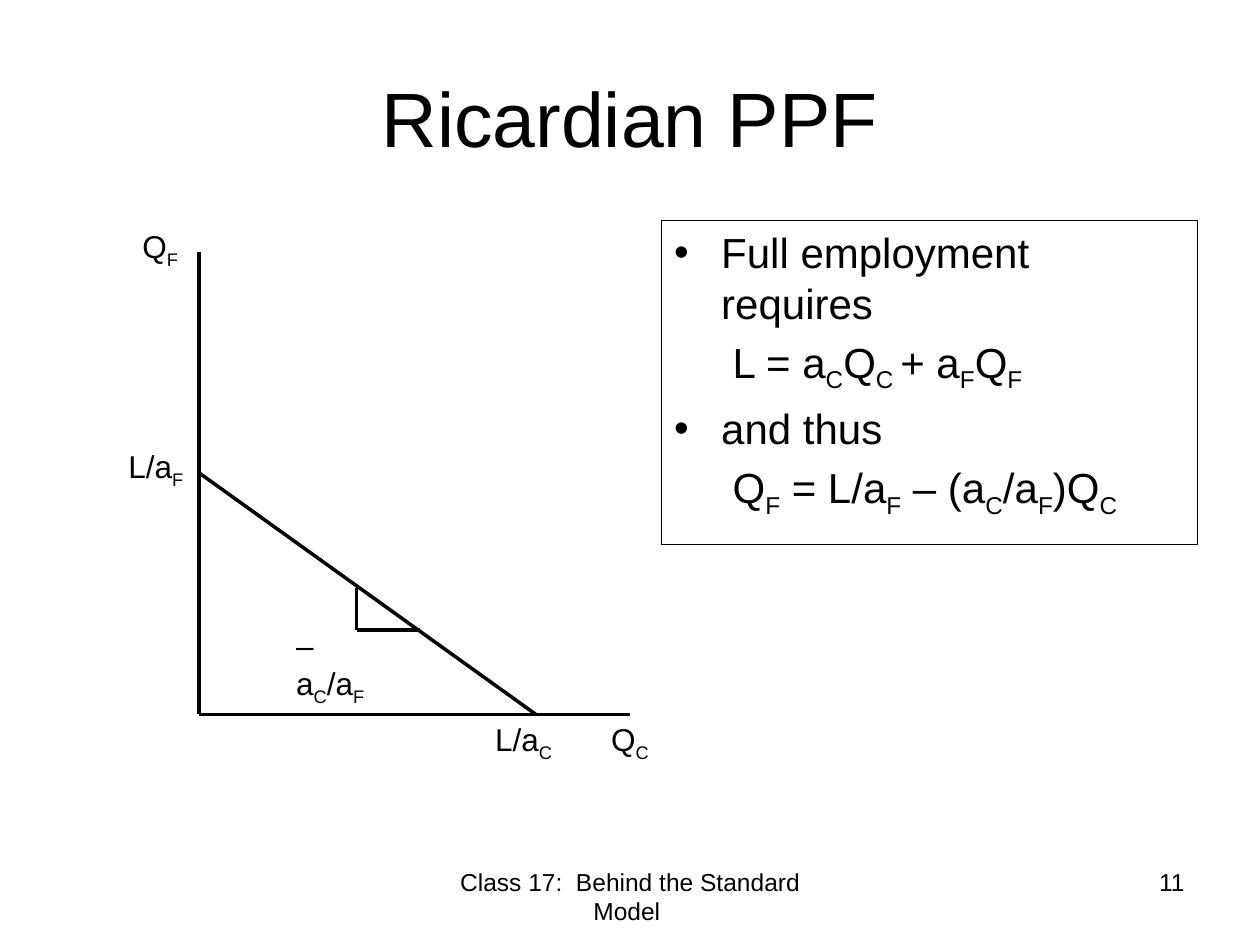
from lxml import etree
from pptx import Presentation
from pptx.dml.color import RGBColor
from pptx.enum.shapes import MSO_CONNECTOR, MSO_SHAPE
from pptx.enum.text import MSO_ANCHOR, PP_ALIGN
from pptx.oxml.ns import qn
from pptx.util import Cm, Pt

BLACK = RGBColor(0, 0, 0)
FONT = "Arial"
STRAIGHT = MSO_CONNECTOR.STRAIGHT
RECTANGLE = MSO_SHAPE.RECTANGLE
LEFT, CENTER, RIGHT = PP_ALIGN.LEFT, PP_ALIGN.CENTER, PP_ALIGN.RIGHT
TOP, MIDDLE = MSO_ANCHOR.TOP, MSO_ANCHOR.MIDDLE

# Text between bars is set as a subscript.
TEXTS = [
    ("Ricardian PPF", (1.27, 0.76, 22.86, 3.18), 44, CENTER, MIDDLE, True),
    ("Class 17:  Behind the Standard Model ", (8.68, 17.35, 8.05, 1.32), 14, CENTER, TOP, True),
    ("11", (18.21, 17.35, 5.92, 1.32), 14, RIGHT, TOP, True),
]
AXIS_LABELS = [
    ("Q|F|", 2.62, 4.45),
    ("Q|C|", 12.07, 14.4),
    ("L/a|F|", 2.34, 8.89),
    ("L/a|C|", 9.73, 14.4),
    ("–a|C|/a|F|", 5.72, 12.5),
]
LABEL_SIZE = (1.9, 1.02)

ORIGIN = (4.01, 14.4)
F_INTERCEPT = (ORIGIN[0], 9.53)
C_INTERCEPT = (10.8, ORIGIN[1])
SLOPE_CORNER = (7.19, 12.7)
LINES = [
    (ORIGIN, (12.7, ORIGIN[1])),
    (ORIGIN, (ORIGIN[0], 5.08)),
    (F_INTERCEPT, C_INTERCEPT),
    ((SLOPE_CORNER[0], 11.86), SLOPE_CORNER),
    ((8.47, SLOPE_CORNER[1]), SLOPE_CORNER),
]

CONDITIONS_BOX = (13.34, 4.45, 10.8, 6.53)
CONDITIONS = [
    ("Full employment requires", True),
    ("L = a|C|Q|C |+ a|F|Q|F|", False),
    ("and thus", True),
    ("Q|F| = L/a|F| – (a|C|/a|F|)Q|C|", False),
]
BULLET_INDENT, EQUATION_INDENT = Cm(0.95), Cm(1.18)


def write(paragraph, marked_text, size):
    for position, piece in enumerate(marked_text.split("|")):
        if not piece:
            continue
        run = paragraph.add_run()
        run.text = piece
        run.font.name = FONT
        run.font.size = Pt(size)
        run.font.color.rgb = BLACK
        if position % 2:
            run.font._element.set("baseline", "-25000")


def add_text(slide, text, box, size, align=LEFT, anchor=TOP, wrap=False):
    frame = slide.shapes.add_textbox(*map(Cm, box)).text_frame
    frame.word_wrap = wrap
    frame.vertical_anchor = anchor
    frame.paragraphs[0].alignment = align
    write(frame.paragraphs[0], text, size)


def add_line(slide, start, end):
    line = slide.shapes.add_connector(STRAIGHT, *map(Cm, start + end))
    line.line.color.rgb = BLACK
    line.line.width = Pt(2)
    etree.SubElement(line._element.spPr, qn("a:effectLst"))


def add_conditions(slide):
    box = slide.shapes.add_shape(RECTANGLE, *map(Cm, CONDITIONS_BOX))
    box.shadow.inherit = False
    box.fill.background()
    box.line.color.rgb = BLACK
    box.line.width = Pt(0.75)
    frame = box.text_frame
    frame.word_wrap = True
    frame.vertical_anchor = TOP
    for index, (text, bulleted) in enumerate(CONDITIONS):
        paragraph = frame.add_paragraph() if index else frame.paragraphs[0]
        paragraph.alignment = LEFT
        paragraph.space_before = Pt(5)
        properties = paragraph._p.get_or_add_pPr()
        properties.set("marL", str(BULLET_INDENT if bulleted else EQUATION_INDENT))
        if bulleted:
            properties.set("indent", str(-BULLET_INDENT))
            etree.SubElement(properties, qn("a:buFont"), typeface=FONT)
            etree.SubElement(properties, qn("a:buChar"), char="•")
        write(paragraph, text, 24)


def main():
    deck = Presentation()
    deck.slide_width, deck.slide_height = Cm(25.4), Cm(19.05)
    slide = deck.slides.add_slide(deck.slide_layouts[6])
    for text in TEXTS:
        add_text(slide, *text)
    for start, end in LINES:
        add_line(slide, start, end)
    for text, left, top in AXIS_LABELS:
        add_text(slide, text, (left, top, *LABEL_SIZE), 18)
    add_conditions(slide)
    deck.save("out.pptx")


if __name__ == "__main__":
    main()
